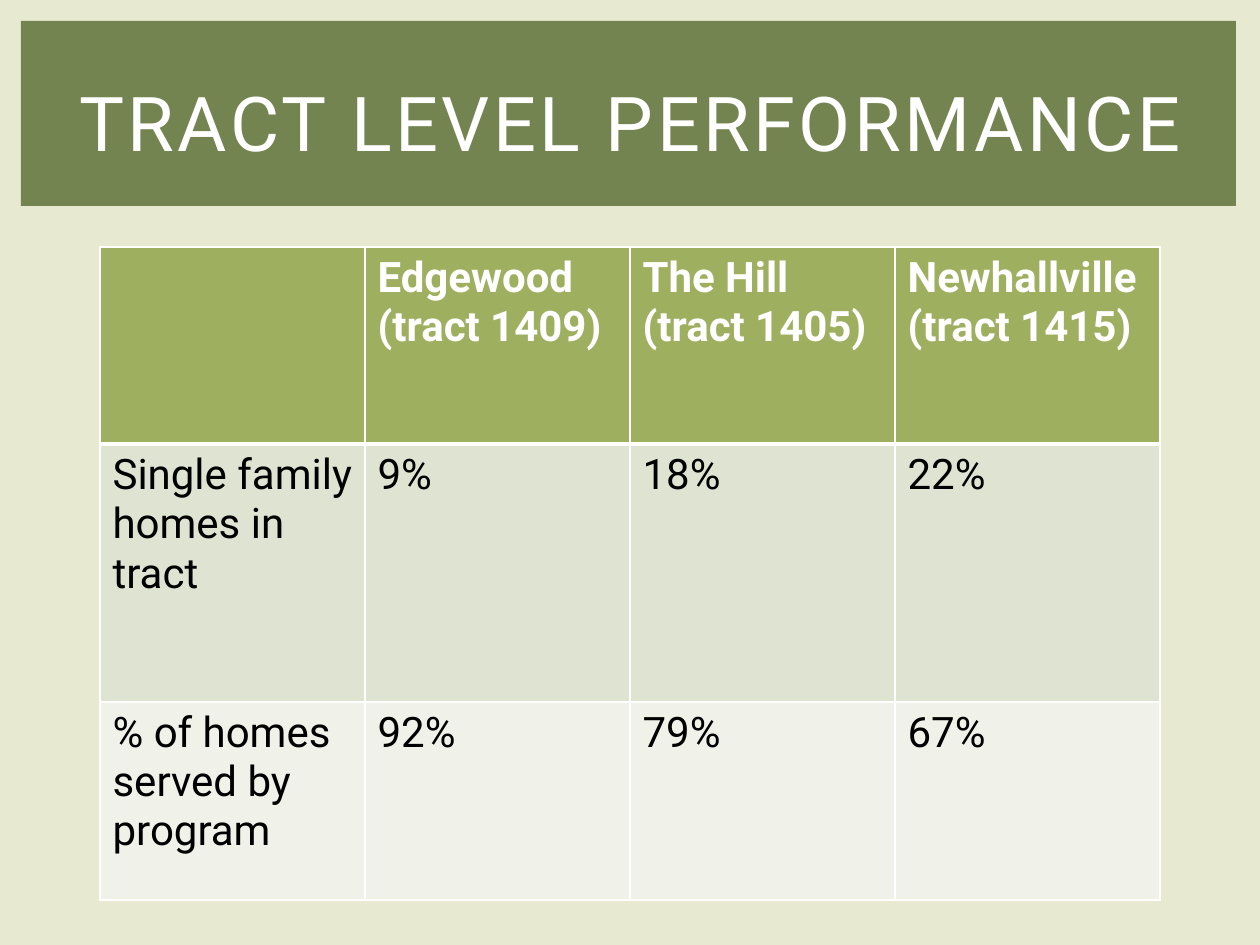
"""Build the tract level performance slide."""
from dataclasses import dataclass

from lxml.etree import SubElement
from pptx import Presentation
from pptx.dml.color import RGBColor
from pptx.enum.shapes import MSO_SHAPE
from pptx.enum.text import MSO_ANCHOR, PP_ALIGN
from pptx.oxml.ns import qn
from pptx.slide import Slide
from pptx.table import _Cell
from pptx.util import Emu, Pt

EMU_PER_PX = 914400 / 126
FONT = "Roboto"
WHITE = "FFFFFF"
COLUMN_WIDTH = 265


@dataclass(frozen=True)
class TableRow:
    height: int
    fill: str
    color: str
    bold: bool
    top_line: int
    bottom_line: int
    texts: tuple[str, ...]


ROWS = (
    TableRow(197, "9EB060", WHITE, True, 1, 3,
             ("", "Edgewood (tract 1409)", "The Hill (tract 1405)", "Newhallville (tract 1415)")),
    TableRow(258, "DFE4D2", "000000", False, 3, 1,
             ("Single family homes in tract", "9%", "18%", "22%")),
    TableRow(198, "F0F2EA", "000000", False, 1, 1,
             ("% of homes served by program", "92%", "79%", "67%")),
)


def px(length: int) -> Emu:
    return Emu(round(length * EMU_PER_PX))


def rgb(value: str) -> RGBColor:
    return RGBColor.from_string(value)


def set_fill(target, color: str) -> None:
    target.fill.solid()
    target.fill.fore_color.rgb = rgb(color)


def set_font(font, size: float, color: str, bold: bool = False) -> None:
    font.name = FONT
    font.size = Pt(size)
    font.bold = bold
    font.color.rgb = rgb(color)


def add_banner(page: Slide) -> None:
    banner = page.shapes.add_shape(MSO_SHAPE.RECTANGLE, px(21), px(21), px(1215), px(185))
    banner.shadow.inherit = False
    set_fill(banner, "738450")
    banner.line.fill.background()


def add_title(page: Slide, text: str) -> None:
    frame = page.shapes.add_textbox(px(53), px(49), px(1155), px(145)).text_frame
    frame.word_wrap = True
    frame.vertical_anchor = MSO_ANCHOR.MIDDLE
    para = frame.paragraphs[0]
    para.alignment = PP_ALIGN.CENTER
    span = para.add_run()
    span.text = text
    set_font(span.font, 43.2, WHITE)
    span.font._element.set("spc", "200")


def set_borders(cell: _Cell, row: TableRow) -> None:
    properties = cell._tc.get_or_add_tcPr()
    widths = {"a:lnL": 1, "a:lnR": 1, "a:lnT": row.top_line, "a:lnB": row.bottom_line}
    for tag, width in widths.items():
        line = SubElement(properties, qn(tag), w=str(Pt(width)))
        SubElement(SubElement(line, qn("a:solidFill")), qn("a:srgbClr"), val=WHITE)


def fill_cell(cell: _Cell, text: str, row: TableRow) -> None:
    set_borders(cell, row)
    set_fill(cell, row.fill)
    cell.text = text
    set_font(cell.text_frame.paragraphs[0].font, 24, row.color, row.bold)


def add_tract_table(page: Slide, rows: tuple[TableRow, ...]) -> None:
    columns = len(rows[0].texts)
    height = sum(row.height for row in rows)
    table = page.shapes.add_table(
        len(rows), columns, px(100), px(247), px(COLUMN_WIDTH * columns), px(height)
    ).table
    for column in table.columns:
        column.width = px(COLUMN_WIDTH)
    for index, row in enumerate(rows):
        table.rows[index].height = px(row.height)
        for cell, text in zip(table.rows[index].cells, row.texts):
            fill_cell(cell, text, row)


def main() -> None:
    deck = Presentation()
    deck.slide_width, deck.slide_height = px(1260), px(945)
    page = deck.slides.add_slide(deck.slide_layouts[6])
    set_fill(page.background, "E8E9D1")
    add_banner(page)
    add_title(page, "TRACT LEVEL PERFORMANCE")
    add_tract_table(page, ROWS)
    deck.save("out.pptx")


if __name__ == "__main__":
    main()
